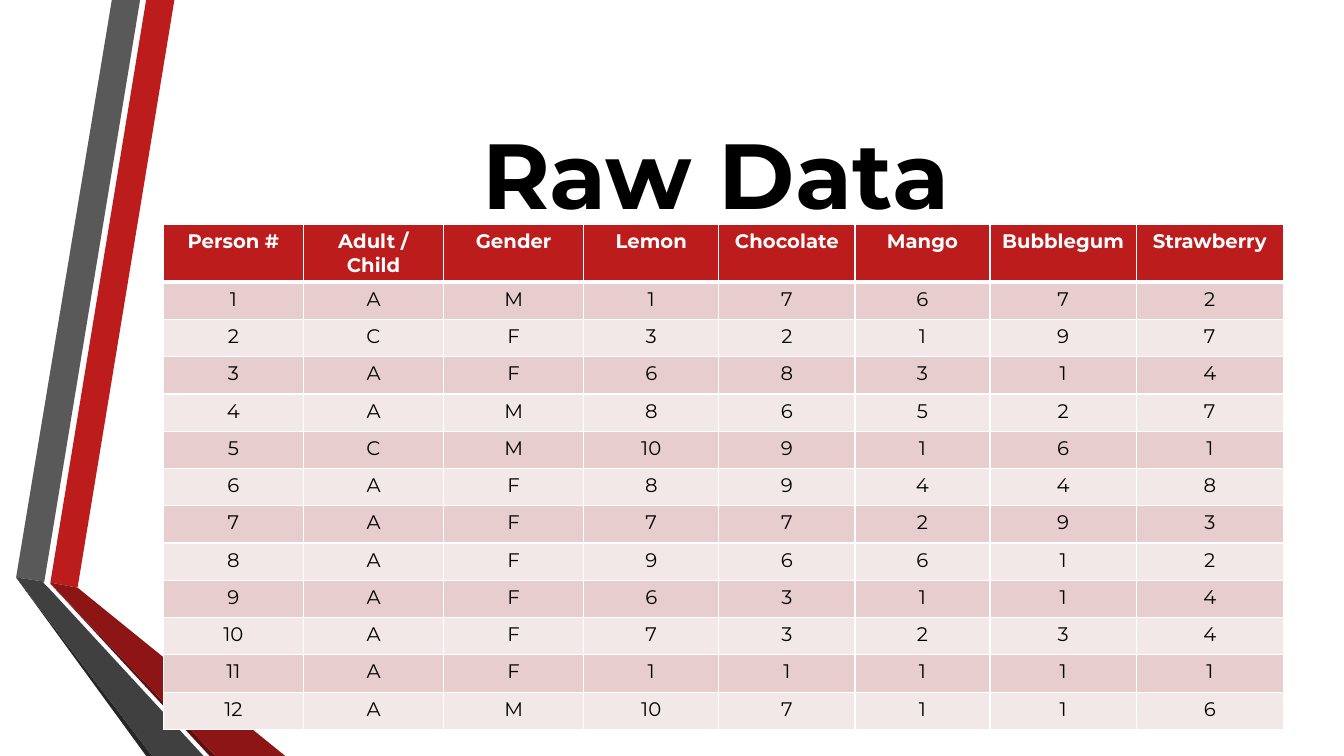
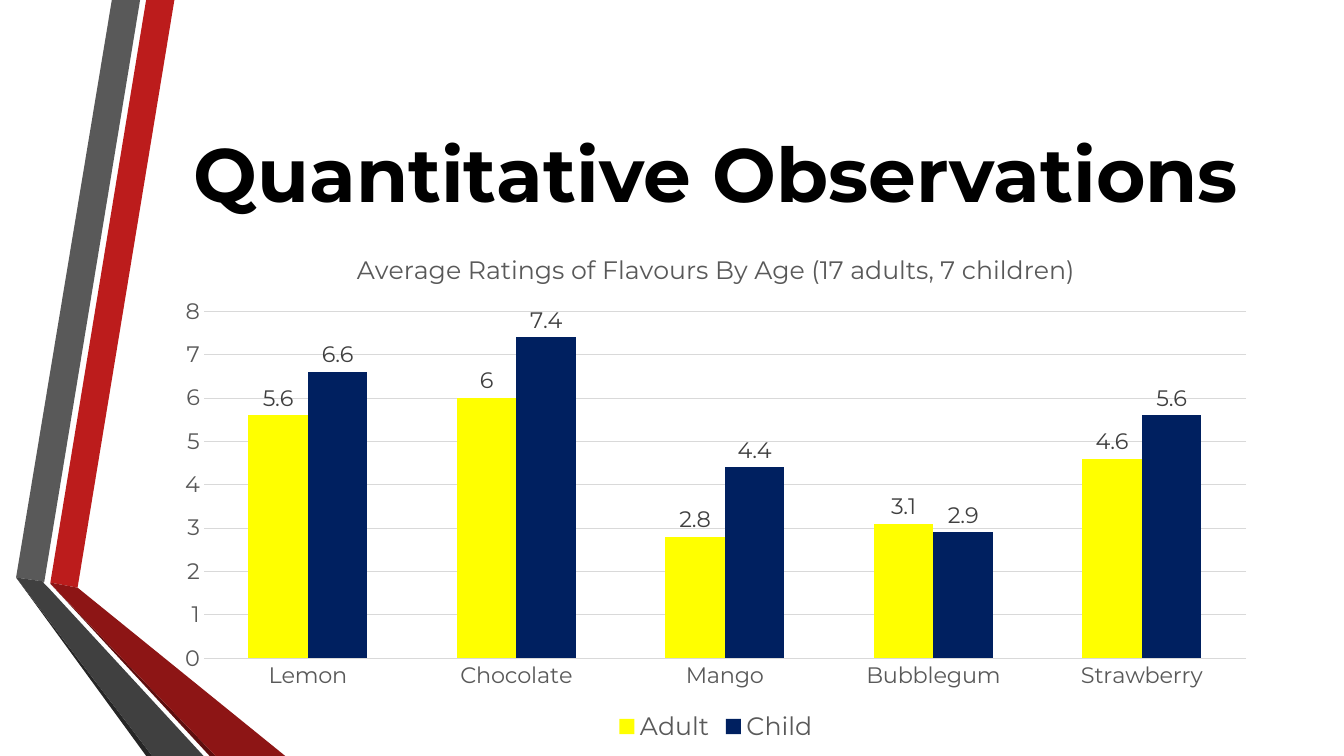
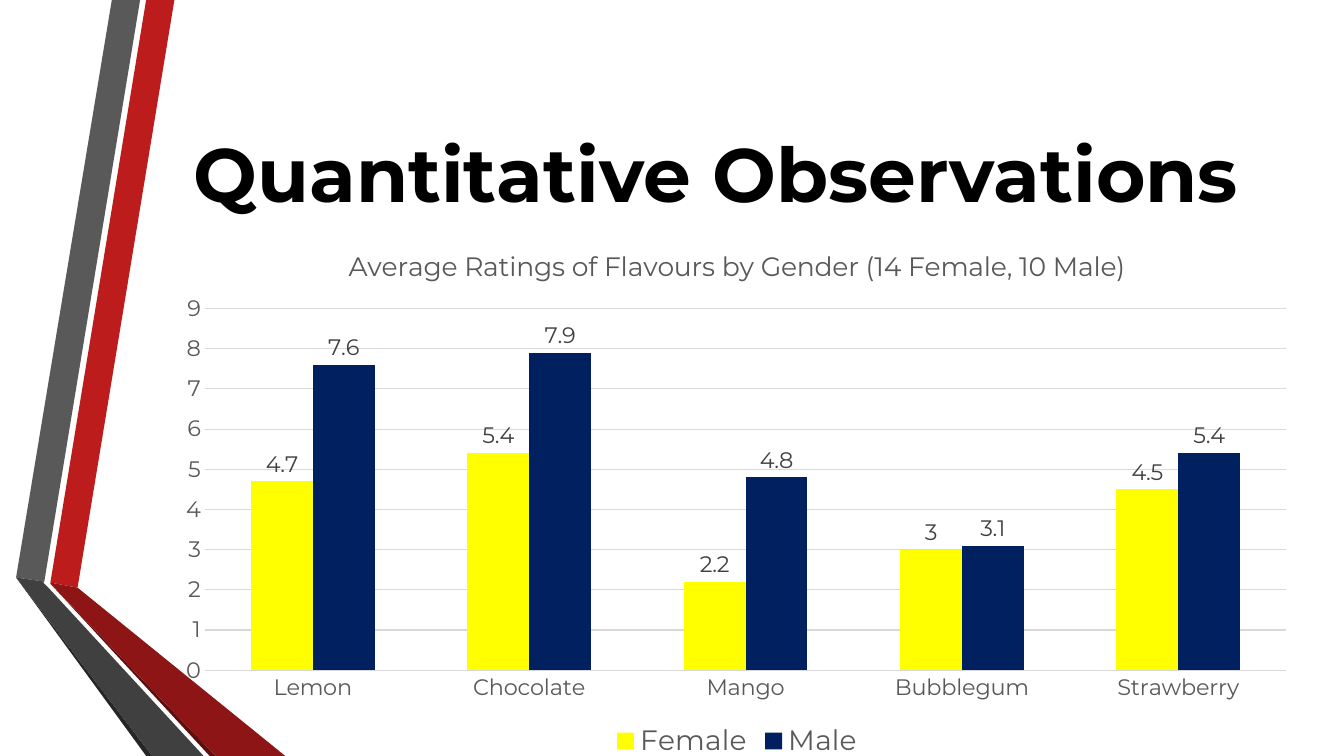
import lxml.etree
import pptx
import pptx.chart.data
import pptx.dml.color
import pptx.enum.chart
import pptx.enum.text
import pptx.oxml.ns
import pptx.util

Inches = pptx.util.Inches
Pt = pptx.util.Pt
qn = pptx.oxml.ns.qn

# Shared style
FONT = "Montserrat"
LEFT = 1.62
COLORS = {
    "black": "000000", "white": "FFFFFF", "red": "BC1C1C", "grey": "595959",
    "dark_red": "8D1515", "dark_grey": "404040", "red_edge": "5E0E0E",
    "grey_edge": "262626", "row_odd": "E7CDCD", "row_even": "F3E8E8",
    "grid": "D9D9D9", "yellow": "FFFF00", "navy": "002060",
}

# Ribbon pieces from back to front: colour and corner points
RIBBONS = [
    ("red", [(0.5, 5.78), (0.77, 5.83), (1.73, 0), (1.45, 0)]),
    ("grey", [(1.39, 0), (1.11, 0), (0.16, 5.73), (0.44, 5.77)]),
    ("grey_edge", [(0.16, 5.73), (1.45, 7.5), (1.51, 7.5)]),
    ("red_edge", [(0.5, 5.79), (2.08, 7.5), (2.14, 7.5)]),
    ("dark_red", [(0.5, 5.79), (2.14, 7.5), (2.83, 7.5), (0.77, 5.83), (0.5, 5.78)]),
    ("dark_grey", [(2.02, 7.5), (0.48, 5.83), (0.43, 5.78), (0.44, 5.77),
                   (0.16, 5.73), (1.51, 7.5)]),
]

# Content
FLAVOURS = ["Lemon", "Chocolate", "Mango", "Bubblegum", "Strawberry"]
HEADERS = ["Person #", "Adult / Child", "Gender"] + FLAVOURS
COL_WIDTHS = [1.39, 1.39, 1.39, 1.34, 1.35, 1.34, 1.45, 1.46]
RATINGS = [
    ("A", "M", 1, 7, 6, 7, 2),
    ("C", "F", 3, 2, 1, 9, 7),
    ("A", "F", 6, 8, 3, 1, 4),
    ("A", "M", 8, 6, 5, 2, 7),
    ("C", "M", 10, 9, 1, 6, 1),
    ("A", "F", 8, 9, 4, 4, 8),
    ("A", "F", 7, 7, 2, 9, 3),
    ("A", "F", 9, 6, 6, 1, 2),
    ("A", "F", 6, 3, 1, 1, 4),
    ("A", "F", 7, 3, 2, 3, 4),
    ("A", "F", 1, 1, 1, 1, 1),
    ("A", "M", 10, 7, 1, 1, 6),
]


def rgb(name):
    return pptx.dml.color.RGBColor.from_string(COLORS[name])


def style_font(font, size, color, bold=False):
    font.name, font.size, font.bold = FONT, Pt(size), bold
    font.color.rgb = rgb(color)


def add_run(p, text, size, color, bold=False):
    p.alignment = pptx.enum.text.PP_ALIGN.CENTER
    r = p.add_run()
    r.text = text
    style_font(r.font, size, color, bold)


def add_ribbons(s):
    for color, points in RIBBONS:
        corners = [(Inches(x), Inches(y)) for x, y in points]
        builder = s.shapes.build_freeform(*corners[0])
        builder.add_line_segments(corners[1:], close=True)
        sp = builder.convert_to_shape()
        sp.shadow.inherit = False
        sp.fill.solid()
        sp.fill.fore_color.rgb = rgb(color)
        sp.line.fill.background()


def add_title(s, text, size):
    sp = s.shapes.add_textbox(Inches(LEFT), Inches(0.75), Inches(10.96), Inches(1.92))
    tf = sp.text_frame
    tf.word_wrap = True
    tf.vertical_anchor = pptx.enum.text.MSO_ANCHOR.MIDDLE
    add_run(tf.paragraphs[0], text, size, "black", True)


def new_slide(prs, title, size):
    s = prs.slides.add_slide(prs.slide_layouts[6])
    add_ribbons(s)
    add_title(s, title, size)
    return s


def set_borders(cell, top, bottom):
    tcPr = cell._tc.get_or_add_tcPr()
    for side, width in (("L", 1), ("R", 1), ("T", top), ("B", bottom)):
        ln = lxml.etree.SubElement(tcPr, qn("a:ln" + side), w=str(Pt(width)))
        fill = lxml.etree.SubElement(ln, qn("a:solidFill"))
        lxml.etree.SubElement(fill, qn("a:srgbClr"), val=COLORS["white"])


def add_ratings_table(s):
    rows = [HEADERS] + [(i, *row) for i, row in enumerate(RATINGS, 1)]
    heights = [0.57] + [0.37] * len(RATINGS)
    table = s.shapes.add_table(len(rows), len(HEADERS), Inches(LEFT), Inches(2.23),
                               Inches(sum(COL_WIDTHS)), Inches(sum(heights))).table
    for col, width in zip(table.columns, COL_WIDTHS):
        col.width = Inches(width)
    for i, values in enumerate(rows):
        table.rows[i].height = Inches(heights[i])
        header = i == 0
        fill = "red" if header else "row_odd" if i % 2 else "row_even"
        for j, value in enumerate(values):
            cell = table.cell(i, j)
            # The rule under the header is thicker
            set_borders(cell, 3 if i == 1 else 1, 3 if header else 1)
            cell.fill.solid()
            cell.fill.fore_color.rgb = rgb(fill)
            add_run(cell.text_frame.paragraphs[0], str(value), 14,
                    "white" if header else "black", header)


def place_plot(chart, box, plot):
    """Fix the inner plot area; both boxes are left, top, width, height in inches."""
    area = chart._chartSpace.chart.plotArea
    for old in area.findall(qn("c:layout")):
        area.remove(old)
    layout = lxml.etree.Element(qn("c:layout"))
    area.insert(0, layout)
    manual = lxml.etree.SubElement(layout, qn("c:manualLayout"))
    fractions = [(plot[0] - box[0]) / box[2], (plot[1] - box[1]) / box[3],
                 plot[2] / box[2], plot[3] / box[3]]
    settings = [("layoutTarget", "inner"), ("xMode", "edge"), ("yMode", "edge")]
    settings += [(tag, f"{value:.4f}") for tag, value in zip("xywh", fractions)]
    for tag, value in settings:
        lxml.etree.SubElement(manual, qn("c:" + tag), val=value)


def style_axes(chart, top):
    for axis in (chart.category_axis, chart.value_axis):
        axis.major_tick_mark = pptx.enum.chart.XL_TICK_MARK.NONE
        axis.minor_tick_mark = pptx.enum.chart.XL_TICK_MARK.NONE
        axis.format.line.fill.background()
        style_font(axis.tick_labels.font, 16, "grey")
    axis = chart.value_axis
    axis.minimum_scale, axis.maximum_scale, axis.major_unit = 0, top, 1
    line = axis.major_gridlines.format.line
    line.width = Pt(0.75)
    line.color.rgb = rgb("grid")


def add_ratings_chart(s, title, series, box, plot_box, top, title_size, legend_size):
    data = pptx.chart.data.CategoryChartData()
    data.categories = FLAVOURS
    for name, values in series:
        data.add_series(name, values)
    chart = s.shapes.add_chart(pptx.enum.chart.XL_CHART_TYPE.COLUMN_CLUSTERED,
                               *map(Inches, box), data).chart
    chart.font.name, chart.font.size = "Calibri", Pt(10)
    chart.font.color.rgb = rgb("black")
    add_run(chart.chart_title.text_frame.paragraphs[0], title, title_size, "grey")
    chart.chart_title.include_in_layout = False
    chart.has_legend = True
    chart.legend.position = pptx.enum.chart.XL_LEGEND_POSITION.BOTTOM
    chart.legend.include_in_layout = False
    style_font(chart.legend.font, legend_size, "grey")
    style_axes(chart, top)
    place_plot(chart, box, plot_box)
    # Columns and their labels
    plot = chart.plots[0]
    plot.gap_width, plot.overlap, plot.vary_by_categories = 150, 0, False
    for ser, color in zip(plot.series, ("yellow", "navy")):
        ser.format.fill.solid()
        ser.format.fill.fore_color.rgb = rgb(color)
        labels = ser.data_labels
        labels.show_value = True
        labels.position = pptx.enum.chart.XL_LABEL_POSITION.OUTSIDE_END
        style_font(labels.font, 16, "dark_grey")


def main():
    prs = pptx.Presentation()
    prs.slide_width, prs.slide_height = Inches(13.33), Inches(7.5)

    # Raw data
    add_ratings_table(new_slide(prs, "Raw Data", 66))

    # Ratings by age
    s = new_slide(prs, "Quantitative Observations", 54)
    add_ratings_chart(
        s, "Average Ratings of Flavours By Age (17 adults, 7 children)",
        [("Adult", (5.6, 6, 2.8, 3.1, 4.6)), ("Child", (6.6, 7.4, 4.4, 2.9, 5.6))],
        box=(LEFT, 2.3, 10.96, 5.11), plot_box=(2.02, 3.09, 10.34, 3.44),
        top=8, title_size=18, legend_size=18)

    # Ratings by gender
    s = new_slide(prs, "Quantitative Observations", 54)
    add_ratings_chart(
        s, "Average Ratings of Flavours by Gender (14 Female, 10 Male)",
        [("Female", (4.7, 5.4, 2.2, 3, 4.5)), ("Male", (7.6, 7.9, 4.8, 3.1, 5.4))],
        box=(LEFT, 2.25, 11.38, 5.33), plot_box=(2.03, 3.06, 10.73, 3.59),
        top=9, title_size=19, legend_size=20)

    prs.save("out.pptx")


if __name__ == "__main__":
    main()
